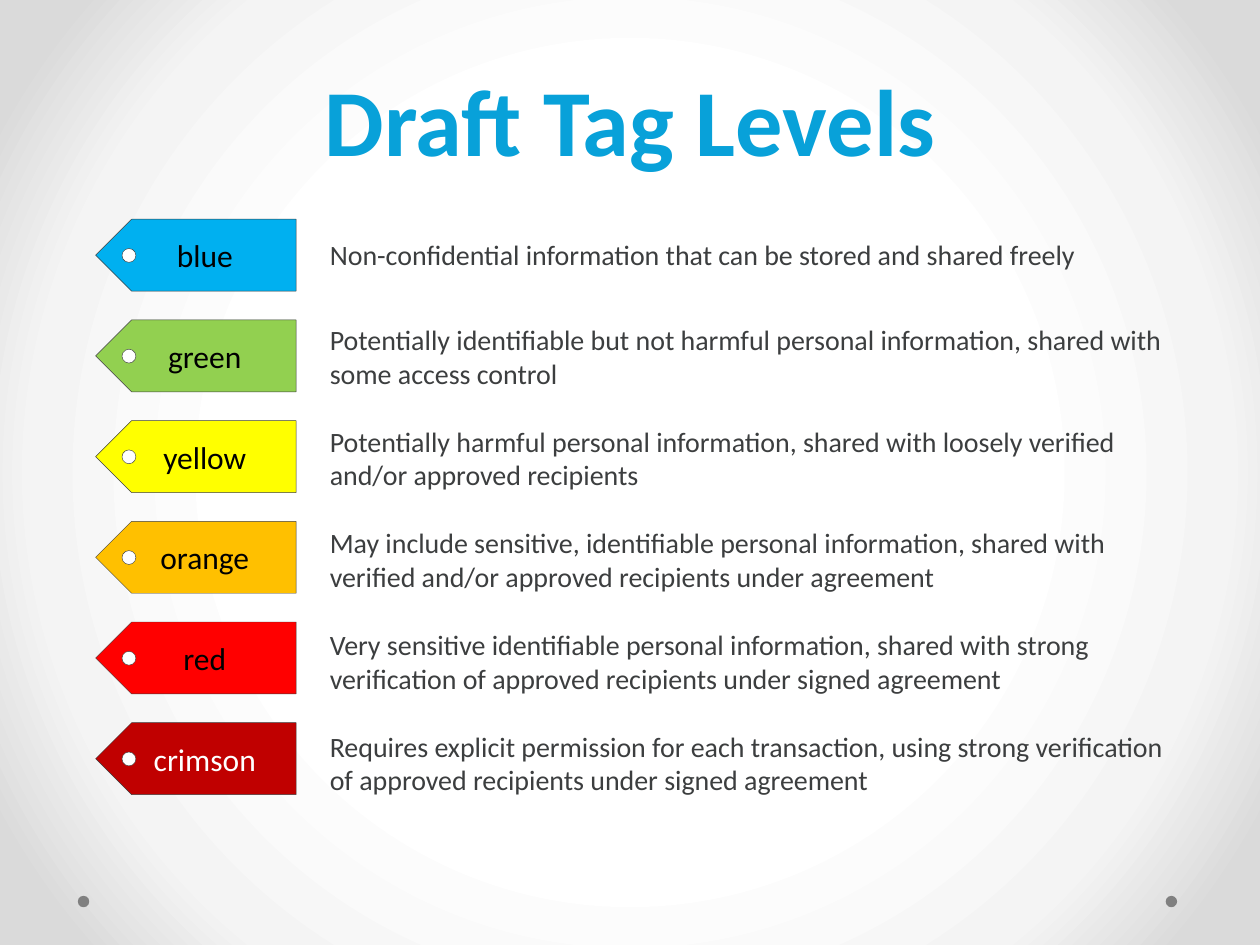
from dataclasses import dataclass
from typing import Any

from pptx import Presentation
from pptx import oxml
from pptx import util as u
from pptx.dml import color
from pptx.enum import shapes, text
from pptx.oxml import ns

LEVELS = [
    ("blue", "00B0F0", "000000",
     "Non-confidential information that can be stored and shared freely", 1),
    ("green", "92D050", "000000",
     "Potentially identifiable but not harmful personal information, "
     "shared with some access control", 2),
    ("yellow", "FFFF00", "000000",
     "Potentially harmful personal information, shared with loosely "
     "verified and/or approved recipients", 2),
    ("orange", "FFC000", "000000",
     "May include sensitive, identifiable personal information, shared "
     "with verified and/or approved recipients under agreement", 2),
    ("red", "FF0000", "000000",
     "Very sensitive identifiable personal information, shared with strong "
     "verification of approved recipients under signed agreement", 2),
    ("crimson", "C00000", "FFFFFF",
     "Requires explicit permission for each transaction, using strong "
     "verification of approved recipients under signed agreement", 2),
]
BACKDROP = [(50, "FFFFFF"), (76, "F4F4F4"), (92, "DADADA")]


def rgb(code):
    return color.RGBColor.from_string(code)


def write(frame, words, *, font, size, ink, bold=False, spacing=None,
          align=text.PP_ALIGN.LEFT, anchor=text.MSO_ANCHOR.MIDDLE):
    frame.word_wrap = True
    frame.vertical_anchor = anchor
    paragraph = frame.paragraphs[0]
    paragraph.alignment = align
    paragraph.line_spacing = spacing
    run = paragraph.add_run()
    run.text = words
    run.font.name = font
    run.font.size = u.Pt(size)
    run.font.bold = bold
    run.font.color.rgb = rgb(ink)


@dataclass
class Board:
    slide: Any
    font: str = "Calibri"
    dark: str = "3C3E3F"
    accent: str = "08A1D9"

    def backdrop(self, stops):
        self.slide.background.fill.gradient()
        linear = next(self.slide.element.iter(ns.qn("a:gradFill")))
        marks = "".join(
            f'<a:gs pos="{position * 1000}"><a:srgbClr val="{code}"/></a:gs>'
            for position, code in stops)
        radial = oxml.parse_xml(
            f'<a:gradFill {ns.nsdecls("a")} rotWithShape="1">'
            f'<a:gsLst>{marks}</a:gsLst><a:path path="circle">'
            '<a:fillToRect l="50000" t="50000" r="50000" b="50000"/>'
            '</a:path></a:gradFill>')
        linear.getparent().replace(linear, radial)

    def box(self, left, top, width, height):
        return self.slide.shapes.add_textbox(
            u.Cm(left), u.Cm(top), u.Cm(width), u.Cm(height)).text_frame

    def preset(self, kind, left, top, width, height, fill, outlined=True):
        shape = self.slide.shapes.add_shape(
            kind, u.Cm(left), u.Cm(top), u.Cm(width), u.Cm(height))
        shape.shadow.inherit = False
        shape.fill.solid()
        shape.fill.fore_color.rgb = rgb(fill)
        if outlined:
            shape.line.color.rgb = rgb(self.dark)
            shape.line.width = u.Pt(0.25)
        else:
            shape.line.fill.background()
        return shape

    def dot(self, left, top, size, fill, outlined=True):
        self.preset(shapes.MSO_SHAPE.OVAL, left, top, size, size, fill, outlined)

    def title(self, words):
        write(self.box(1.27, 0.48, 22.86, 3.15), words, font=self.font,
              size=54, ink=self.accent, bold=True, spacing=0.75,
              align=text.PP_ALIGN.CENTER, anchor=text.MSO_ANCHOR.BOTTOM)

    def tag(self, top, label, fill, ink):
        tag = self.preset(shapes.MSO_SHAPE.PENTAGON, 1.93, top, 4.04, 1.45, fill)
        tag.element.spPr.xfrm.set("flipH", "1")
        write(tag.text_frame, label, font=self.font, size=18, ink=ink,
              align=text.PP_ALIGN.CENTER)
        self.dot(2.46, top + 0.59, 0.28, "FFFFFF")

    def description(self, middle, words, lines):
        height = 0.26 + 0.68 * lines
        write(self.box(6.4, middle - height / 2, 17.8, height), words,
              font=self.font, size=16, ink=self.dark)


def main():
    deck = Presentation()
    deck.slide_width, deck.slide_height = u.Cm(25.4), u.Cm(19.05)
    board = Board(deck.slides.add_slide(deck.slide_layouts[6]))
    board.backdrop(BACKDROP)
    for left in (1.57, 23.5):
        board.dot(left, 18.06, 0.23, "808080", outlined=False)
    board.title("Draft Tag Levels")
    for row, (label, fill, ink, meaning, lines) in enumerate(LEVELS):
        board.tag(4.42 + 2.03 * row, label, fill, ink)
        board.description(5.13 + 2.05 * row, meaning, lines)
    deck.save("out.pptx")


if __name__ == "__main__":
    main()
